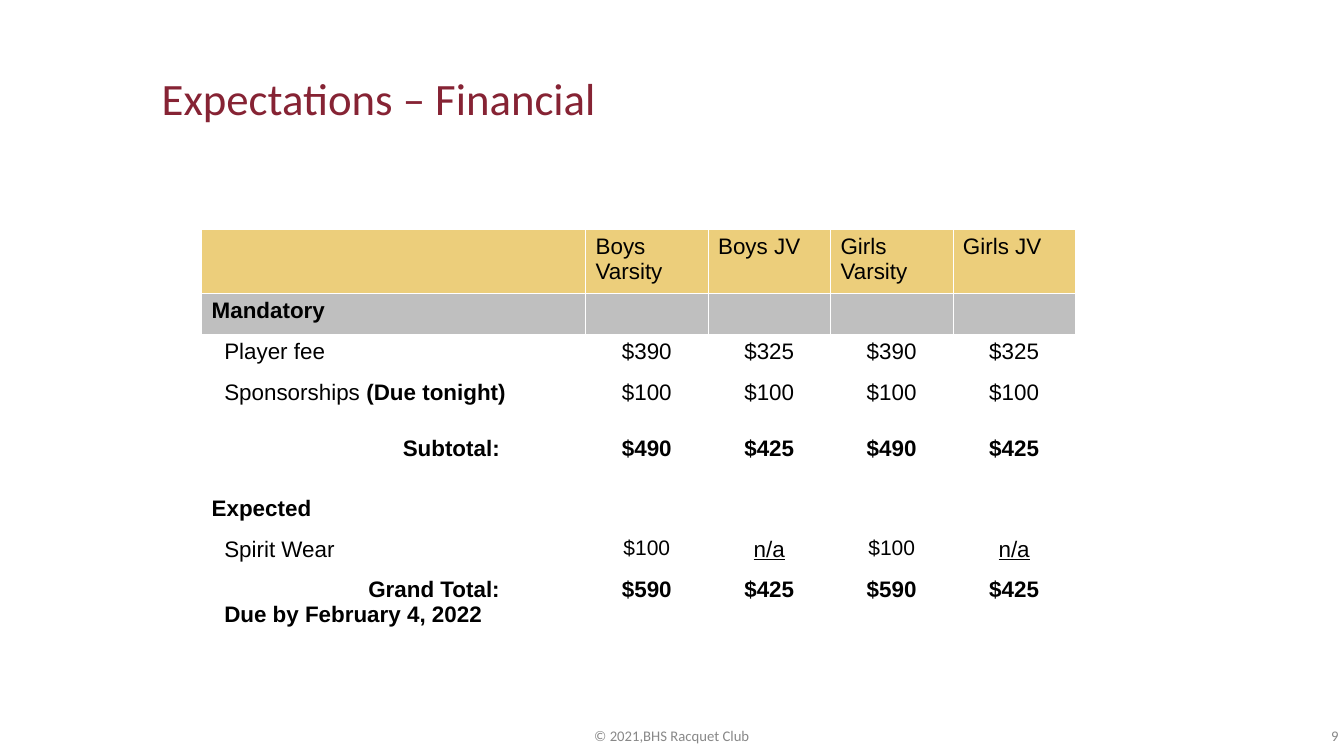
import pptx
import pptx.dml.color
import pptx.enum.text
import pptx.util

Inches, Pt = pptx.util.Inches, pptx.util.Pt
RGBColor = pptx.dml.color.RGBColor
ALIGN = pptx.enum.text.PP_ALIGN
MIDDLE = pptx.enum.text.MSO_ANCHOR.MIDDLE

MAROON = RGBColor(0x86, 0x23, 0x34)
GOLD = RGBColor(0xEC, 0xCE, 0x7B)
SILVER = RGBColor(0xBF, 0xBF, 0xBF)
GREY = RGBColor(0x88, 0x88, 0x88)
BLACK = RGBColor(0, 0, 0)

deck = pptx.Presentation()
deck.slide_width, deck.slide_height = Inches(26.67), Inches(15)
slide = deck.slides.add_slide(deck.slide_layouts[6])


def set_font(paragraph, face, size, color, bold=False):
    font = paragraph.font
    font.name, font.size, font.bold = face, Pt(size), bold
    font.color.rgb = color


def add_line(text, left, top, width, height, size, color, align):
    """Place one vertically centred line of Calibri text."""
    box = slide.shapes.add_textbox(*map(Inches, (left, top, width, height)))
    frame = box.text_frame
    frame.word_wrap = True
    frame.vertical_anchor = MIDDLE
    line = frame.paragraphs[0]
    line.text, line.alignment = text, align
    set_font(line, "Calibri", size, color)


add_line("Expectations – Financial", 3.11, 1.33, 21.28, 1.23, 64, MAROON, ALIGN.LEFT)

# Each row: kind, height, label lines, then one amount per team
fees = [
    ("header", 1.27, "", "Boys Varsity", "Boys JV", "Girls Varsity", "Girls JV"),
    ("section", 0.81, "Mandatory", "", "", "", ""),
    ("item", 0.81, "Player fee", "$390", "$325", "$390", "$325"),
    ("item", 1.11, "Sponsorships ", "$100", "$100", "$100", "$100"),
    ("total", 1.19, "Subtotal:", "$490", "$425", "$490", "$425"),
    ("section", 0.81, "Expected", "", "", "", ""),
    ("item", 0.81, "Spirit Wear", "$100", "n/a", "$100", "n/a"),
    ("total", 1.22, "Grand Total:\nDue by February 4, 2022", "$590", "$425", "$590", "$425"),
]
row_fills = {0: GOLD, 1: SILVER}
column_widths = [7.62] + [2.43] * 4

fee_table = slide.shapes.add_table(
    len(fees), len(column_widths), Inches(4), Inches(4.55),
    Inches(sum(column_widths)), Inches(sum(fee[1] for fee in fees))).table
fee_table.first_row = fee_table.horz_banding = False
for column, width in zip(fee_table.columns, column_widths):
    column.width = Inches(width)

for r, (kind, height, *texts) in enumerate(fees):
    fee_table.rows[r].height = Inches(height)
    for c, text in enumerate(texts):
        cell = fee_table.cell(r, c)
        cell.margin_left = cell.margin_right = Inches(0.2)
        cell.margin_top = cell.margin_bottom = Inches(0.1)
        if r in row_fills:
            cell.fill.solid()
            cell.fill.fore_color.rgb = row_fills[r]
        else:
            cell.fill.background()
        if not text:
            continue
        cell.text = text
        for line in cell.text_frame.paragraphs:
            size = 30 if (text, texts[0]) == ("$100", "Spirit Wear") else 32
            set_font(line, "Arial", size, BLACK, kind in ("section", "total"))
            if text == "n/a":
                line.font.underline = True
            if c and kind != "header":
                line.alignment = ALIGN.CENTER
            elif line.text.endswith("otal:"):
                line.alignment = ALIGN.RIGHT
                cell.margin_right = Inches(1.7)
            elif kind in ("item", "total"):
                line._p.get_or_add_pPr().set("marL", str(Inches(0.25)))
            if text == "Sponsorships ":
                deadline = line.add_run()
                deadline.text = "(Due tonight)"
                deadline.font.bold = True

add_line("© 2021,BHS Racquet Club", 9.11, 14.2, 8.44, 0.8, 21, GREY, ALIGN.CENTER)
add_line("9", 20.44, 14.2, 6.22, 0.8, 21, GREY, ALIGN.RIGHT)

deck.save("out.pptx")
